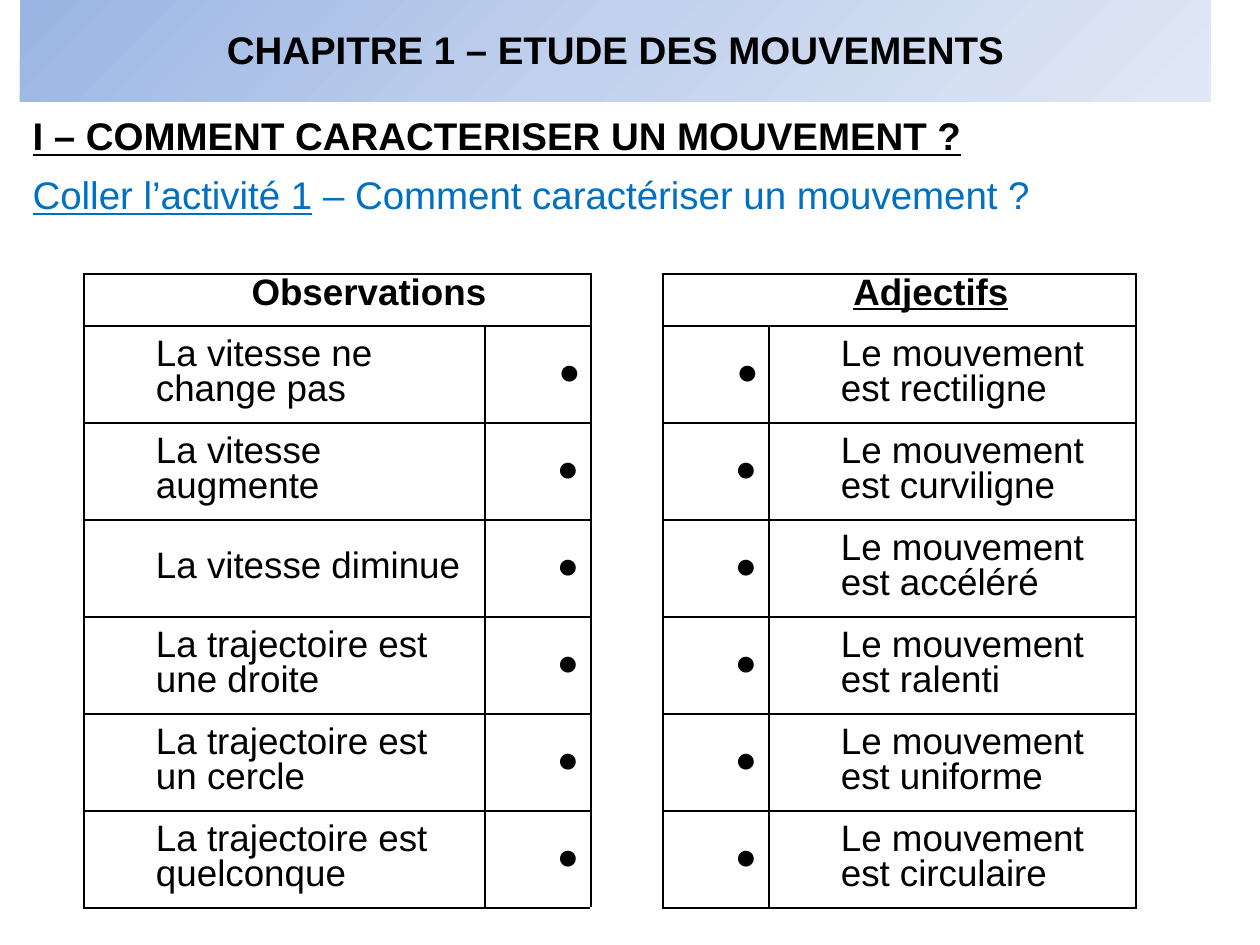
from copy import deepcopy
from lxml import etree
from pptx import Presentation
from pptx import util as u
from pptx.dml.color import RGBColor
from pptx.enum import text
from pptx.oxml.ns import qn

PX = 914400 / 126
BLACK = RGBColor(0x00, 0x00, 0x00)
BLUE = RGBColor(0x00, 0x70, 0xC0)
SHADES = [RGBColor(0x9A, 0xB5, 0xE4), RGBColor(0xC2, 0xD1, 0xED),
          RGBColor(0xE1, 0xE8, 0xF5)]
LEFT, MID = text.PP_ALIGN.LEFT, text.PP_ALIGN.CENTER
JUST = text.PP_ALIGN.JUSTIFY


def px(n):
    return u.Emu(round(n * PX))


def write(para, words, color=BLACK, **form):
    run = para.add_run()
    run.text = words
    run.font.color.rgb = color
    look = {"name": "Arial", "size": u.Pt(22), "bold": False, "underline": False}
    for key, val in {**look, **form}.items():
        setattr(run.font, key, val)


prs = Presentation()
prs.slide_width, prs.slide_height = px(1260), px(945)
slide = prs.slides.add_slide(prs.slide_layouts[3])

# Title and the two lines below it
title, head, task = slide.placeholders
lines = [
    (title, 19, MID, [("CHAPITRE 1 – ETUDE DES MOUVEMENTS", BLACK, {"bold": True})]),
    (head, 106, JUST, [("I – COMMENT CARACTERISER UN MOUVEMENT ?", BLACK,
                        {"bold": True, "underline": True})]),
    (task, 165, JUST, [("Coller l’activité 1", BLUE, {"underline": True}),
                       (" – Comment caractériser un mouvement ? ", BLUE, {})]),
]
for box, top, align, runs in lines:
    place = {"left": px(20), "top": px(top), "width": px(1191), "height": px(60)}
    for key, val in place.items():
        setattr(box, key, val)
    box.text_frame.word_wrap = True
    box.text_frame.auto_size = text.MSO_AUTO_SIZE.SHAPE_TO_FIT_TEXT
    para = box.text_frame.paragraphs[0]
    para.alignment, para.space_before = align, u.Pt(0)
    for words, color, form in runs:
        write(para, words, color, **form)
    prop = para._p.get_or_add_pPr()
    prop.set("marL", "0")
    prop.set("indent", "0")
    etree.SubElement(prop, qn("a:buNone"))

# Title band: three-stop gradient
title.fill.gradient()
title.fill.gradient_angle = 315
first = title._element.spPr.find(".//" + qn("a:gs"))
first.addnext(deepcopy(first))
for stop, shade, pos in zip(title.fill.gradient_stops, SHADES, (0, 0.5, 1)):
    stop.color.rgb = shade
    stop.position = pos

# Matching table
pairs = [
    ("La vitesse ne change pas", "rectiligne"),
    ("La vitesse augmente", "curviligne"),
    ("La vitesse diminue", "accéléré"),
    ("La trajectoire est une droite", "ralenti"),
    ("La trajectoire est un cercle", "uniforme"),
    ("La trajectoire est quelconque", "circulaire"),
]
rows = [("Observations", "", "", "Adjectifs", "")]
rows += [(seen, "●", "", "●", f"Le mouvement est {adj}") for seen, adj in pairs]
cols, highs = [401, 106, 72, 106, 367], [52] + [97] * 6
table = slide.shapes.add_table(len(rows), len(cols), px(84), px(274),
                               px(sum(cols)), px(sum(highs))).table
table.first_row = table.horz_banding = False
for col, wide in zip(table.columns, cols):
    col.width = px(wide)
for row, high in zip(table.rows, highs):
    row.height = px(high)
for start, end in [((0, 0), (0, 1)), ((0, 3), (0, 4)), ((0, 2), (6, 2))]:
    table.cell(*start).merge(table.cell(*end))

for r, row in enumerate(rows):
    for c, words in enumerate(row):
        cell = table.cell(r, c)
        form = {"margin_left": px(9), "margin_right": px(9), "margin_top": 0,
                "margin_bottom": 0, "vertical_anchor": text.MSO_ANCHOR.MIDDLE}
        for key, val in form.items():
            setattr(cell, key, val)
        # The gap column keeps only its side borders
        for side in "LR" if c == 2 else "LRTB":
            edge = etree.SubElement(cell._tc.get_or_add_tcPr(), qn(f"a:ln{side}"),
                                    w=str(u.Pt(1)))
            fill = etree.SubElement(edge, qn("a:solidFill"))
            etree.SubElement(fill, qn("a:srgbClr"), val=str(BLACK))
        cell.fill.background()
        if words:
            para = cell.text_frame.paragraphs[0]
            para.alignment = MID if r == 0 or (r == 1 and words == "●") else LEFT
            para.line_spacing = u.Pt(20 if r else 15)
            para._p.get_or_add_pPr().set("marL", str(px(63)))
            write(para, words, size=u.Pt(21), bold=r == 0,
                  underline=words == "Adjectifs")

prs.save("out.pptx")
